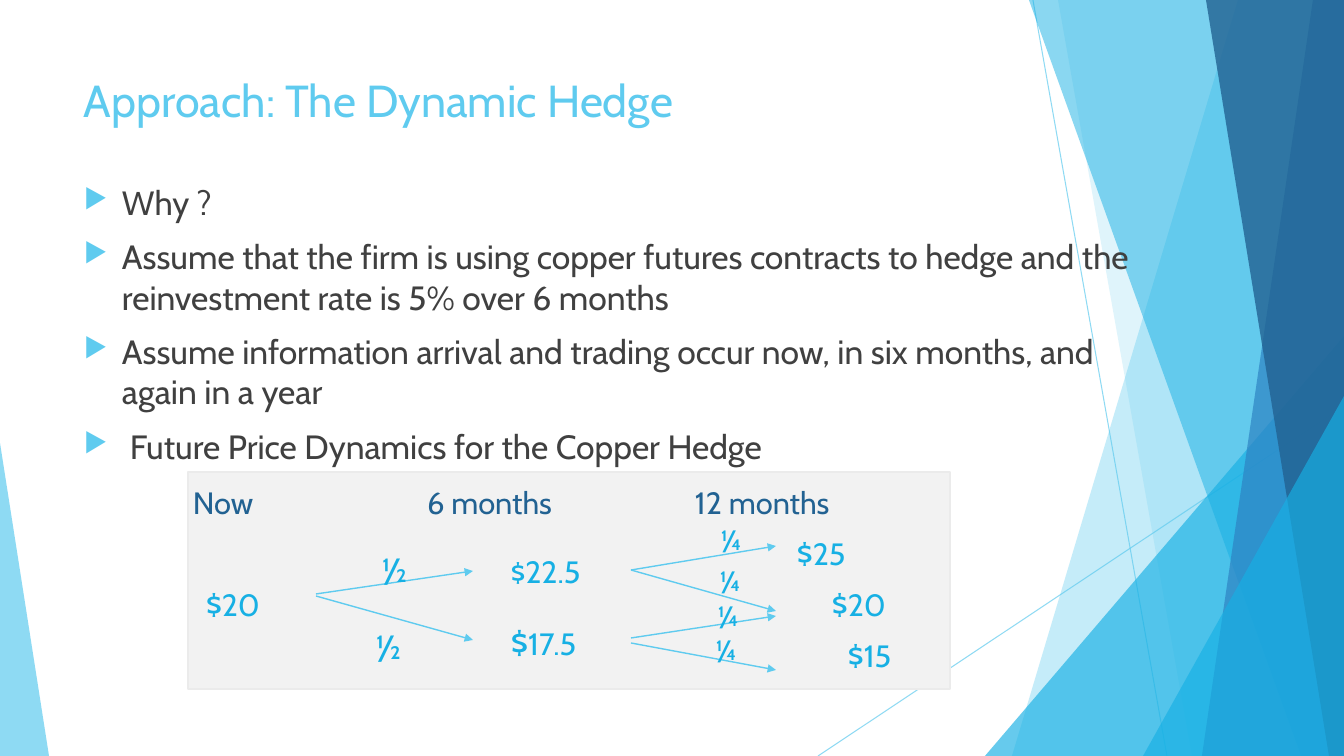
from lxml import etree
from pptx import Presentation, util as u
from pptx.dml.color import RGBColor
from pptx.enum import shapes, text
from pptx.oxml import ns

PX = 914400 / 100.8  # EMU in one px
SKY, CYAN, NAVY, GREY = "5FCBEF", "17B0E4", "226292", "404040"
W, H = 1344, 756


def paint(fmt, color, alpha=100):
    """Give a fill a solid colour, with opacity in percent."""
    fmt.solid()
    fmt.fore_color.rgb = RGBColor.from_string(color)
    if alpha < 100:
        clr = fmt._xPr.find(".//" + ns.qn("a:srgbClr"))
        etree.SubElement(clr, ns.qn("a:alpha"), val=str(alpha * 1000))


def add_text(x, y, w, h, lines, size, color, wrap=True):
    """Add a text box without insets, one paragraph for each line."""
    tf = slide.shapes.add_textbox(*[round(v * PX) for v in (x, y, w, h)]).text_frame
    tf.margin_left = tf.margin_right = tf.margin_top = tf.margin_bottom = 0
    tf.word_wrap = wrap
    tf.text = "\n".join(lines)
    for p in tf.paragraphs:
        p.font.size, p.font.name = u.Pt(size), "Cabin"
        p.font.color.rgb = RGBColor.from_string(color)
    return tf


prs = Presentation()
prs.slide_width, prs.slide_height = round(W * PX), round(H * PX)
slide = prs.slides.add_slide(prs.slide_layouts[6])

# Lines: two thin background rays, then the arrows of the price tree
rays = [(1033, 0, 1167, H), (W, 406, 818, H)]
arrows = [
    (631, 570, 776, 546), (631, 570, 776, 611),
    (316, 594, 473, 571), (631, 638, 776, 616),
    (316, 596, 473, 640), (631, 643, 776, 670),
]
connectors = []
for ends in rays + arrows:
    c = slide.shapes.add_connector(
        shapes.MSO_CONNECTOR.STRAIGHT, *[round(v * PX) for v in ends])
    is_ray = ends in rays
    paint(c.line.fill, SKY, 70 if is_ray else 100)
    c.line.width = u.Pt(0.75 if is_ray else 1)
    if not is_ray:
        etree.SubElement(c.line._get_or_add_ln(), ns.qn("a:tailEnd"), type="triangle")
    etree.SubElement(c._element.spPr, ns.qn("a:effectLst"))
    connectors.append(c)

# Background facets: bands give top left and bottom left x and run to the right
# edge; triangles give left, top, width and the place of the apex
facets = [
    ("band", (1238, 1012), SKY, 36),
    ("band", (1058, 1192), SKY, 20),
    ("triangle", (985, 336, 359, 1), CYAN, 66),
    ("band", (1029, 1301), CYAN, 50),
    ("band", (1313, 1202), "2E83C3", 70),
    ("band", (1206, 1329), NAVY, 80),
    ("triangle", (1143, 396, 201, 1), CYAN, 66),
    ("triangle", (0, 443, 49, 0), SKY, 70),
]
for kind, place, color, alpha in facets:
    if kind == "band":
        top_x, bottom_x = place
        fb = slide.shapes.build_freeform(top_x, 0, scale=PX)
        fb.add_line_segments([(W, 0), (W, H), (bottom_x, H)], close=True)
        sp = fb.convert_to_shape()
    else:
        x, y, w, apex = place
        sp = slide.shapes.add_shape(
            shapes.MSO_SHAPE.ISOSCELES_TRIANGLE,
            *[round(v * PX) for v in (x, y, w, H - y)])
        sp.adjustments[0] = apex
    paint(sp.fill, color, alpha)
    sp.line.fill.background()
    sp.shadow.inherit = False

# Panel behind the price tree
panel = slide.shapes.add_shape(
    shapes.MSO_SHAPE.RECTANGLE, *[round(v * PX) for v in (188, 472, 762, 217)])
paint(panel.fill, "F2F2F2")
paint(panel.line.fill, "EBEBEB")
panel.line.width = u.Pt(1.5)
panel.shadow.inherit = False

# Bring the arrows in front of the panel
for c in connectors[len(rays):]:
    panel._element.getparent().append(c._element)

# Title
add_text(84, 73, 928, 60, ["Approach: The Dynamic Hedge"], 32, SKY)

# Bullets
bullets = [
    "Why ?",
    "Assume that the firm is using copper futures contracts to hedge and the "
    "reinvestment rate is 5% over 6 months",
    "Assume information arrival and trading occur now, in six months, and "
    "again in a year",
    "Future Price Dynamics for the Copper Hedge",
]
tf = add_text(84, 182, 1061, 288, bullets, 24, GREY)
for i, p in enumerate(tf.paragraphs):
    p.space_before = u.Pt(10 if i else 0)
    indent = round((46 if i == 3 else 38) * PX)
    pPr = p._p.get_or_add_pPr()
    pPr.set("marL", str(indent))
    pPr.set("indent", str(-indent))
    bullet = [
        etree.Element(ns.qn("a:buClr")),
        etree.Element(ns.qn("a:buSzPct"), val="80000"),
        etree.Element(ns.qn("a:buChar"), char="▶"),
    ]
    etree.SubElement(bullet[0], ns.qn("a:srgbClr"), val=SKY)
    at = pPr.index(pPr.find(ns.qn("a:defRPr")))
    for n, el in enumerate(bullet):
        pPr.insert(at + n, el)

# Price tree labels: text, left, middle, size, colour
labels = [
    ("Now", 193, 502, 22, NAVY),
    ("6 months", 427, 502, 22, NAVY),
    ("12 months", 695, 502, 22, NAVY),
    ("$20", 206, 604, 22, CYAN),
    ("$22.5", 511, 571, 22, CYAN),
    ("$17.5", 511, 642, 22, CYAN),
    ("$25", 797, 553, 22, CYAN),
    ("$20", 832, 604, 22, CYAN),
    ("$15", 848, 655, 22, CYAN),
    ("½", 382, 569, 24, CYAN),
    ("½", 376, 646, 24, CYAN),
    ("¼", 721, 539, 20, CYAN),
    ("¼", 720, 580, 20, CYAN),
    ("¼", 718, 615, 20, CYAN),
    ("¼", 716, 649, 20, CYAN),
]
dollar_sizes = {"$22.5": 20, "$17.5": 24}
for label, x, middle, size, color in labels:
    tf = add_text(x, middle - 20, 7 * size, 40, [label], size, color, wrap=False)
    tf.vertical_anchor = text.MSO_ANCHOR.MIDDLE
    if label in dollar_sizes:
        p = tf.paragraphs[0]
        p.text = "$"
        p.runs[0].font.size = u.Pt(dollar_sizes[label])
        p.add_run().text = label[1:]

prs.save("out.pptx")
